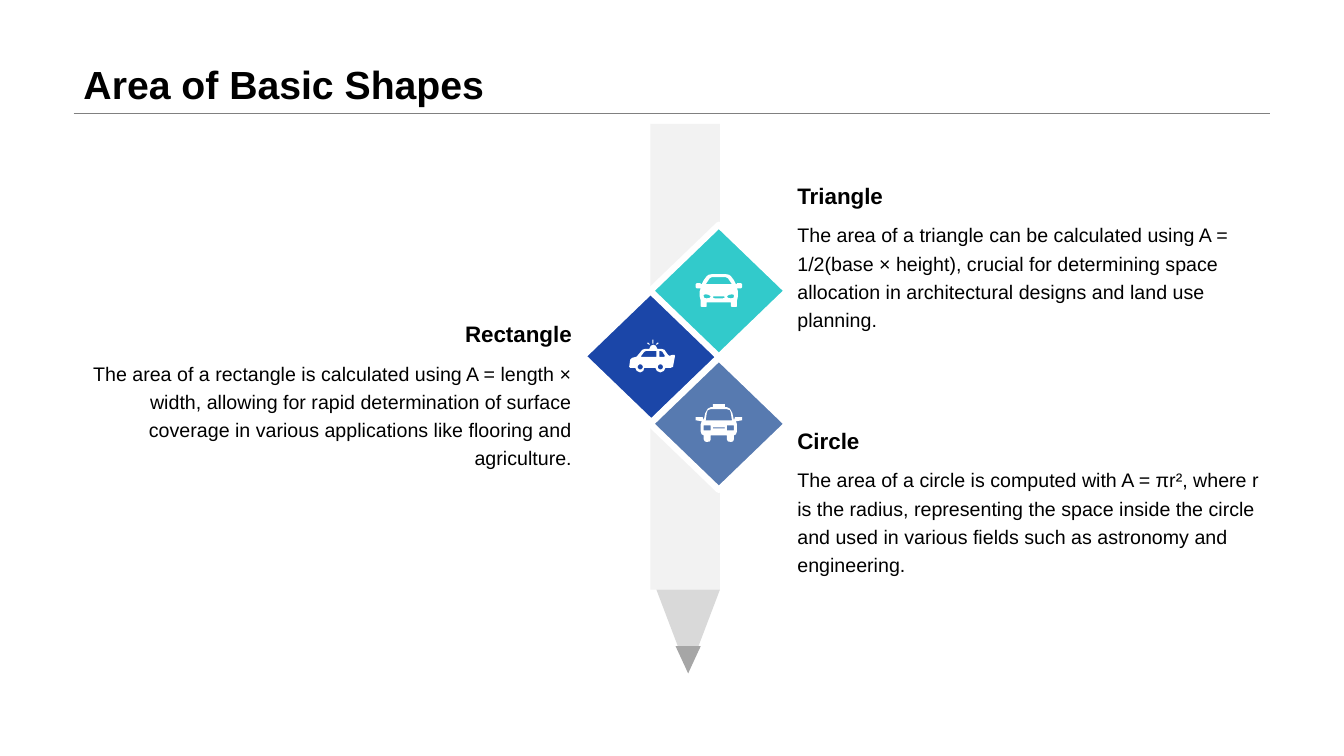
from dataclasses import dataclass
from math import cos, pi, sin

from lxml import etree
from pptx import Presentation
from pptx.dml.color import RGBColor
from pptx.enum.shapes import MSO_CONNECTOR, MSO_SHAPE
from pptx.enum.text import MSO_ANCHOR, MSO_AUTO_SIZE, PP_ALIGN
from pptx.oxml.ns import qn
from pptx.util import Inches, Pt

STRAIGHT = MSO_CONNECTOR.STRAIGHT
RECTANGLE = MSO_SHAPE.RECTANGLE
TRIANGLE = MSO_SHAPE.ISOSCELES_TRIANGLE
DIAMOND = MSO_SHAPE.DIAMOND
TOP, BOTTOM = MSO_ANCHOR.TOP, MSO_ANCHOR.BOTTOM
LEFT, RIGHT = PP_ALIGN.LEFT, PP_ALIGN.RIGHT
FIT_SHAPE, NO_FIT = MSO_AUTO_SIZE.SHAPE_TO_FIT_TEXT, MSO_AUTO_SIZE.NONE


@dataclass(frozen=True)
class Theme:
    font: str = "Arial"
    text: str = "000000"
    white: str = "FFFFFF"
    rule: str = "808080"
    pencil_body: str = "F2F2F2"
    pencil_wood: str = "D9D9D9"
    pencil_lead: str = "A6A6A6"
    blue: str = "1B46A8"
    teal: str = "32CACB"
    steel: str = "577AB0"
    title_size: int = 28
    heading_size: int = 16
    body_size: int = 14


class SlideBuilder:
    def __init__(self, page, theme):
        self.page = page
        self.theme = theme

    def paint(self, shape, color, border=None):
        shape.shadow.inherit = False
        shape.fill.solid()
        shape.fill.fore_color.rgb = RGBColor.from_string(color)
        if border:
            shape.line.color.rgb = RGBColor.from_string(border)
            shape.line.width = Pt(4.5)
        else:
            shape.line.fill.background()

    def shape(self, kind, left, top, width, height, color, border=None, turn=0):
        shape = self.page.shapes.add_shape(
            kind, Inches(left), Inches(top), Inches(width), Inches(height))
        shape.rotation = turn
        self.paint(shape, color, border)

    def rule(self, left, right, top):
        line = self.page.shapes.add_connector(
            STRAIGHT, Inches(left), Inches(top), Inches(right), Inches(top))
        line.line.color.rgb = RGBColor.from_string(self.theme.rule)
        line.line.width = Pt(0.25)
        etree.SubElement(line._element.spPr, qn("a:effectLst"))

    def text(self, left, top, width, height, words, size, bold=False,
             align=LEFT, anchor=TOP, spacing=1.0, fit=FIT_SHAPE):
        box = self.page.shapes.add_textbox(
            Inches(left), Inches(top), Inches(width), Inches(height))
        frame = box.text_frame
        frame.word_wrap = True
        frame.auto_size = fit
        frame.vertical_anchor = anchor
        para = frame.paragraphs[0]
        para.alignment = align
        para.line_spacing = spacing
        span = para.add_run()
        span.text = words
        span.font.name = self.theme.font
        span.font.size = Pt(size)
        span.font.bold = bold
        span.font.color.rgb = RGBColor.from_string(self.theme.text)

    def icon(self, left, top, contours):
        scaled = [[(x * 10, y * 10) for x, y in contour] for contour in contours]
        builder = self.page.shapes.build_freeform(*scaled[0][0], scale=Inches(0.001))
        builder.add_line_segments(scaled[0][1:], close=True)
        for contour in scaled[1:]:
            builder.move_to(*contour[0])
            builder.add_line_segments(contour[1:], close=True)
        self.paint(builder.convert_to_shape(Inches(left), Inches(top)), self.theme.white)

    def topic(self, left, top, width, heading, body, align):
        self.text(left, top, width, 0.37, heading, self.theme.heading_size,
                  bold=True, align=align, anchor=BOTTOM)
        self.text(left, top + 0.37, width, 0.64, body, self.theme.body_size,
                  align=align, spacing=1.2)


def mirror(points):
    return [(-x, y) for x, y in reversed(points)]


def symmetric(half):
    return half + mirror(half)


def wheel(center_x, center_y, radius, steps=16):
    return [(center_x + radius * cos(2 * pi * step / steps),
             center_y + radius * sin(2 * pi * step / steps)) for step in range(steps)]


CAR_HEADLIGHT = [(12, 24), (9, 23.5), (8, 22), (10, 20.5),
                 (13, 20), (15, 20.5), (15, 22), (14.5, 23.5)]
FRONT_CAR = [
    symmetric([(7, 0), (10, 0.5), (12, 2), (15, 6), (17, 10), (18, 10), (18, 9),
               (22, 9), (23, 10), (23, 13), (22, 14), (18, 14), (19, 17), (19, 22),
               (18, 26), (18, 32), (17, 32.5), (13, 32.5), (12, 32), (12, 28)]),
    symmetric([(7, 3), (9, 4), (11, 7), (13, 10)]),
    symmetric([(5, 22), (6, 22.5), (5.5, 23.5), (4, 24)]),
    CAR_HEADLIGHT, mirror(CAR_HEADLIGHT),
]
TAXI_HEADLIGHT = [(8, 21), (15, 21), (15, 26), (8, 26)]
TAXI = [
    symmetric([(6, 0), (6, 3), (8, 3), (11, 4.5), (13.5, 9), (15, 16), (16, 13),
               (23, 13), (23, 16), (17, 17), (18, 20), (18, 27), (17, 30), (15, 31),
               (15, 35), (14, 37), (12, 37.5), (9, 37), (8, 35), (8, 31)]),
    symmetric([(8, 5), (11, 6), (12, 9), (13, 16)]),
    symmetric([(6, 23), (6, 24)]),
    TAXI_HEADLIGHT, mirror(TAXI_HEADLIGHT),
]
POLICE_CAR = [
    [(24, 5), (26.5, 6), (28, 9), (32, 9), (35, 10), (38.5, 15), (40, 16), (43, 15),
     (45, 15), (45.5, 16), (43.5, 27), (41, 28), (36, 28), (34.5, 31), (31, 32.5),
     (27.5, 31), (26, 28), (15, 28), (14, 31), (11, 32.5), (7.5, 31), (6, 28),
     (1, 28), (0, 27), (1, 20), (3, 18), (7, 17), (9, 15), (13, 10), (16, 9),
     (20, 9), (21.5, 6)],
    [(30, 11), (30, 17), (35, 17), (35.5, 16), (33, 12), (31, 11)],
    [(17, 11), (15, 12), (12, 16), (12, 17), (27, 17), (27, 11)],
    [(28, 3), (29, 3), (29, 4), (27, 5), (26.5, 4.5)],
    [(18, 3), (19, 3), (20.5, 4.5), (20, 5), (18, 4)],
    [(23, 0), (24, 0), (24, 4), (23, 4)],
    wheel(11, 27, 2.6), wheel(31, 27, 2.6),
]


def main():
    theme = Theme()
    deck = Presentation()
    deck.slide_width, deck.slide_height = Inches(13.33), Inches(7.5)
    slide = SlideBuilder(deck.slides.add_slide(deck.slide_layouts[6]), theme)

    slide.rule(0.73, 12.6, 1.12)
    slide.text(0.73, 0, 11.87, 1.12, "Area of Basic Shapes", theme.title_size,
               bold=True, anchor=BOTTOM, spacing=0.9, fit=NO_FIT)

    slide.shape(RECTANGLE, 6.45, 1.23, 0.69, 4.62, theme.pencil_body)
    slide.shape(TRIANGLE, 6.51, 5.85, 0.63, 0.83, theme.pencil_wood, turn=180)
    slide.shape(TRIANGLE, 6.7, 6.41, 0.25, 0.27, theme.pencil_lead, turn=180)

    tiles = [
        (5.78, 2.88, theme.blue, POLICE_CAR, 6.24, 3.37),
        (6.45, 2.23, theme.teal, FRONT_CAR, 7.13, 2.72),
        (6.45, 3.55, theme.steel, TAXI, 7.13, 4.01),
    ]
    for left, top, color, contours, icon_left, icon_top in tiles:
        slide.shape(DIAMOND, left, top, 1.36, 1.31, color, border=theme.white)
        slide.icon(icon_left, icon_top, contours)

    topics = [
        (0.73, 3.12, 5.04, "Rectangle",
         "The area of a rectangle is calculated using A = length × width, allowing for "
         "rapid determination of surface coverage in various applications like "
         "flooring and agriculture.", RIGHT),
        (7.81, 1.75, 4.79, "Triangle",
         "The area of a triangle can be calculated using A = 1/2(base × height), "
         "crucial for determining space allocation in architectural designs and "
         "land use planning.", LEFT),
        (7.81, 4.18, 4.79, "Circle",
         "The area of a circle is computed with A = πr², where r is the radius, "
         "representing the space inside the circle and used in various fields such "
         "as astronomy and engineering.", LEFT),
    ]
    for topic in topics:
        slide.topic(*topic)

    deck.save("out.pptx")


if __name__ == "__main__":
    main()
